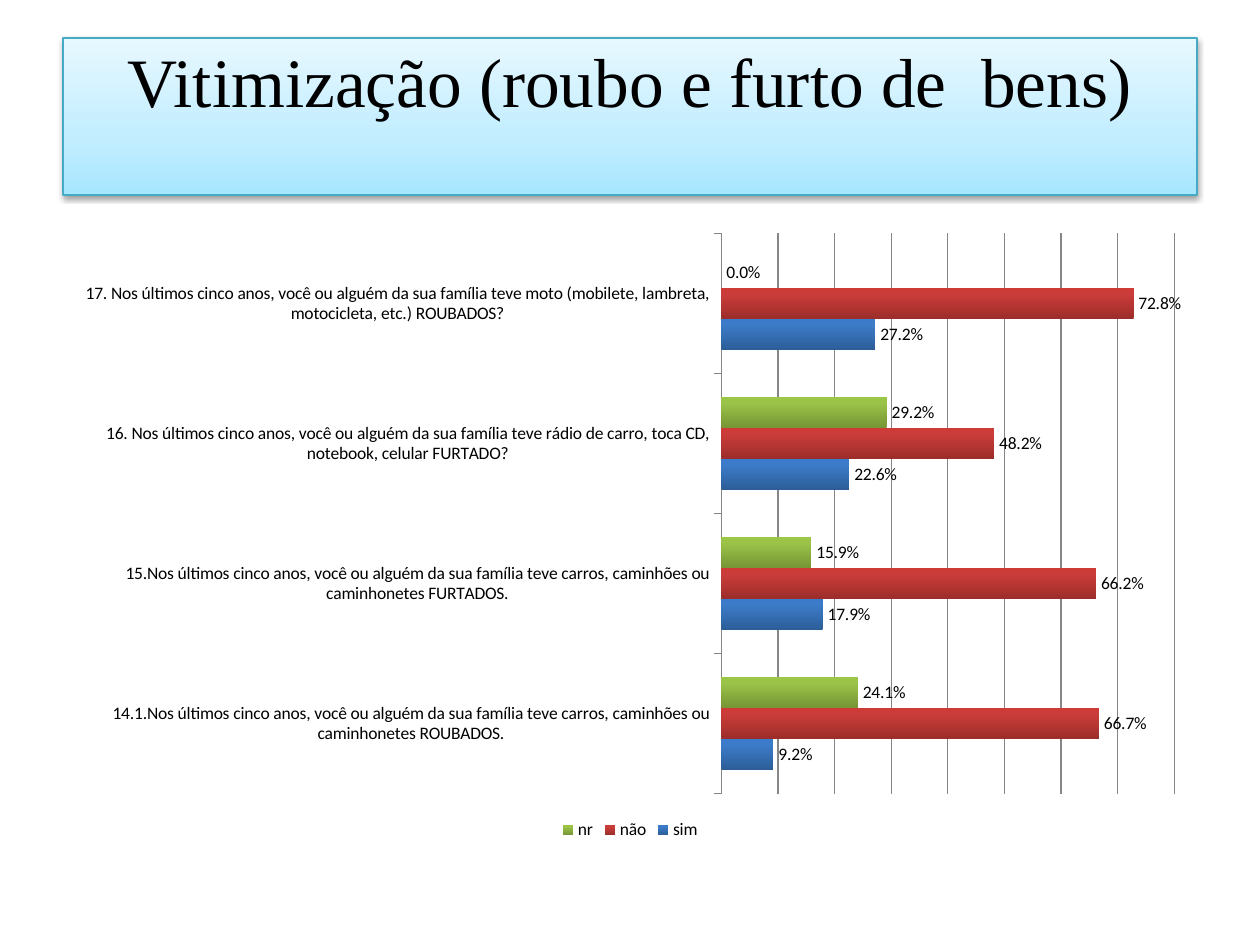
from pptx import Presentation
from pptx import oxml, util as u
from pptx.chart.data import CategoryChartData
from pptx.dml.color import RGBColor
from pptx.enum import chart as charts, shapes, text
from pptx.oxml.ns import nsdecls

EMU_PER_PX = 914400 / 126
BLACK = RGBColor(0x00, 0x00, 0x00)
GRID = RGBColor(0x86, 0x86, 0x86)
TEAL = RGBColor(0x46, 0xAA, 0xC5)
# Gradient stops run from bottom to top: position in percent, colour
SKY = [(0, RGBColor(0xA7, 0xE6, 0xFF)), (35, RGBColor(0xC1, 0xED, 0xFF)),
       (100, RGBColor(0xE7, 0xF8, 0xFF))]
BLUE = [(0, RGBColor(0x2C, 0x5D, 0x98)), (80, RGBColor(0x3C, 0x7B, 0xC7)),
        (100, RGBColor(0x3A, 0x7C, 0xCB))]
RED = [(0, RGBColor(0x9B, 0x2D, 0x2A)), (80, RGBColor(0xCB, 0x3D, 0x3A)),
       (100, RGBColor(0xCE, 0x3B, 0x37))]
GREEN = [(0, RGBColor(0x76, 0x95, 0x35)), (80, RGBColor(0x9B, 0xC3, 0x48)),
         (100, RGBColor(0x9C, 0xC7, 0x46))]

PERCENT = "0.0%"
QUESTION = "Nos últimos cinco anos, você ou alguém da sua família teve "
CATEGORIES = [
    f"14.1.{QUESTION}carros, caminhões ou caminhonetes ROUBADOS.",
    f"15.{QUESTION}carros, caminhões ou caminhonetes FURTADOS.",
    f"16. {QUESTION}rádio de carro, toca CD, notebook, celular FURTADO?",
    f"17. {QUESTION}moto (mobilete, lambreta, motocicleta, etc.) ROUBADOS?",
]
SERIES = [
    ("sim", (0.092, 0.179, 0.226, 0.272), BLUE),
    ("não", (0.667, 0.662, 0.482, 0.728), RED),
    ("nr", (0.241, 0.159, 0.292, 0), GREEN),
]


def px(length):
    return u.Emu(round(length * EMU_PER_PX))


def apply(target, values):
    for name, value in values.items():
        setattr(target, name, value)


def add_gradient(properties, stops):
    marks = "".join(f'<a:gs pos="{pos * 1000}"><a:srgbClr val="{color}"/></a:gs>'
                    for pos, color in stops)
    properties.append(oxml.parse_xml(
        f'<a:gradFill {nsdecls("a")} rotWithShape="1"><a:gsLst>{marks}</a:gsLst>'
        '<a:lin ang="16200000" scaled="0"/></a:gradFill>'))


def add_title(page, box):
    banner = page.shapes.add_shape(shapes.MSO_SHAPE.RECTANGLE, *map(px, box))
    properties = banner._element.spPr
    add_gradient(properties, SKY)
    banner.line.color.rgb = TEAL
    banner.line.width = u.Pt(0.75)
    # Soft shadow below the banner
    properties.append(oxml.parse_xml(
        f'<a:effectLst {nsdecls("a")}><a:outerShdw blurRad="40000" dist="20000" '
        'dir="5400000" rotWithShape="0"><a:srgbClr val="000000">'
        '<a:alpha val="38000"/></a:srgbClr></a:outerShdw></a:effectLst>'))
    # Heading sits at the top edge
    apply(banner.text_frame, {"word_wrap": True, "margin_top": 0, "margin_bottom": 0,
                              "vertical_anchor": text.MSO_ANCHOR.TOP})
    para = banner.text_frame.paragraphs[0]
    para.alignment = text.PP_ALIGN.CENTER
    span = para.add_run()
    span.text = "Vitimização (roubo e furto de  bens)"
    apply(span.font, {"name": "Times New Roman", "size": u.Pt(39.6)})
    span.font.color.rgb = BLACK


def add_bars(page, box):
    data = CategoryChartData(number_format=PERCENT)
    data.categories = CATEGORIES
    for name, values, _ in SERIES:
        data.add_series(name, values)
    chart = page.shapes.add_chart(charts.XL_CHART_TYPE.BAR_CLUSTERED,
                                  *map(px, box), data).chart
    apply(chart, {"has_title": False, "has_legend": True})
    apply(chart.font, {"name": "Calibri", "size": u.Pt(10)})
    chart.font.color.rgb = BLACK
    apply(chart.legend, {"position": charts.XL_LEGEND_POSITION.BOTTOM,
                         "include_in_layout": False})

    # Axes
    apply(chart.value_axis, {"visible": False, "has_major_gridlines": True,
                             "minimum_scale": 0, "maximum_scale": 0.8,
                             "major_unit": 0.1})
    apply(chart.category_axis, {"major_tick_mark": charts.XL_TICK_MARK.OUTSIDE,
                                "has_major_gridlines": False})
    for part in (chart.value_axis.major_gridlines, chart.category_axis):
        part.format.line.color.rgb = GRID
        part.format.line.width = u.Pt(0.75)

    # Bars and their values
    plot = chart.plots[0]
    apply(plot, {"gap_width": 150, "overlap": 0, "vary_by_categories": False})
    for series, (_, _, stops) in zip(plot.series, SERIES):
        series.invert_if_negative = False
        add_gradient(series._element.get_or_add_spPr(), stops)
        apply(series.data_labels, {
            "show_value": True, "number_format": PERCENT,
            "number_format_is_linked": False,
            "position": charts.XL_LABEL_POSITION.OUTSIDE_END})


def main():
    deck = Presentation()
    apply(deck, {"slide_width": px(1260), "slide_height": px(945)})
    page = deck.slides.add_slide(deck.slide_layouts[6])
    add_title(page, (63, 38, 1134, 157))
    add_bars(page, (63, 221, 1134, 624))
    deck.save("out.pptx")


if __name__ == "__main__":
    main()
